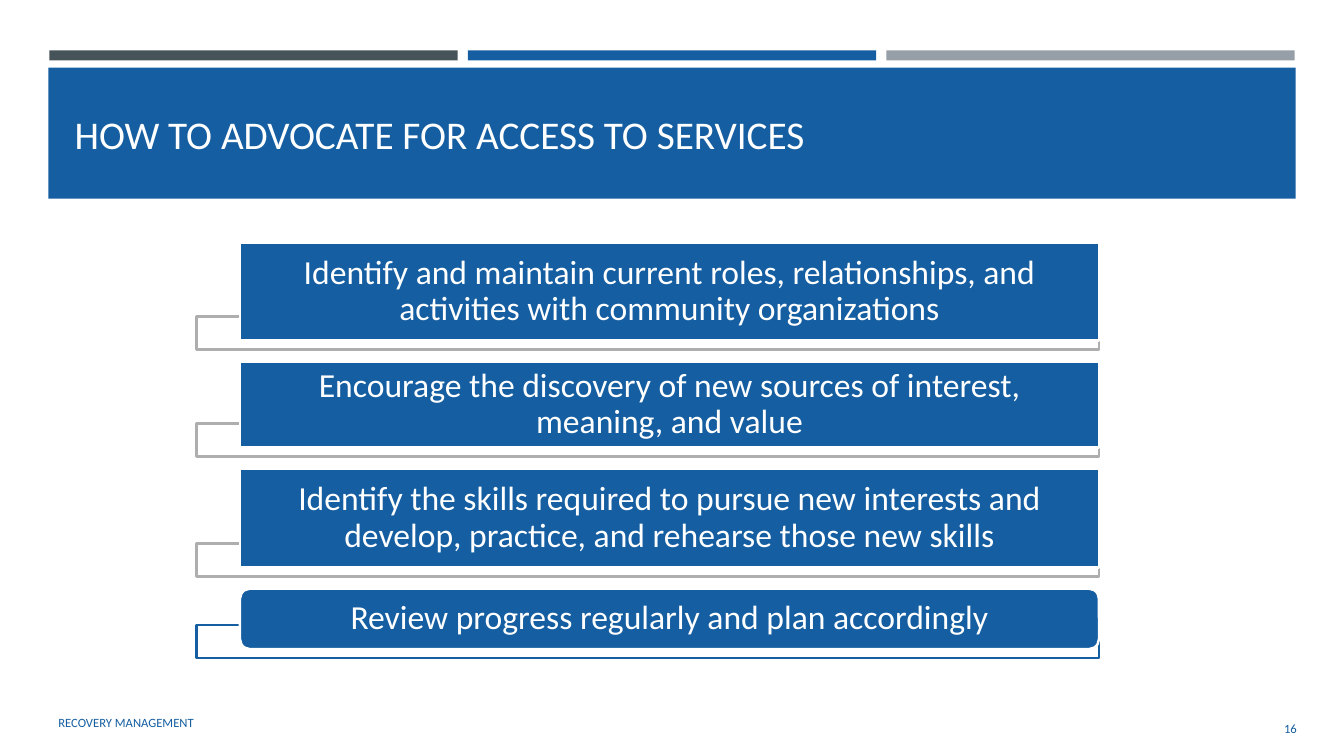
from pptx import Presentation
from pptx.dml.color import RGBColor
from pptx.enum.shapes import MSO_SHAPE
from pptx.enum.text import MSO_ANCHOR, PP_ALIGN
from pptx.util import Inches, Pt

RECT, ROUND = MSO_SHAPE.RECTANGLE, MSO_SHAPE.ROUNDED_RECTANGLE
LEFT, CENTER, RIGHT = PP_ALIGN.LEFT, PP_ALIGN.CENTER, PP_ALIGN.RIGHT
MIDDLE = MSO_ANCHOR.MIDDLE
FONT = "Calibri"
BLUE, WHITE, GRAY = "155EA1", "FFFFFF", "AEAEAE"

TITLE = "HOW TO ADVOCATE FOR ACCESS TO SERVICES"
BARS = ["465359", BLUE, "969FA7"]
STEPS = [
    ("Identify and maintain current roles, relationships, and activities with community organizations", 0.97, RECT, GRAY),
    ("Encourage the discovery of new sources of interest, meaning, and value", 0.85, RECT, GRAY),
    ("Identify the skills required to pursue new interests and develop, practice, and rehearse those new skills", 0.98, RECT, GRAY),
    ("Review progress regularly and plan accordingly", 0.6, ROUND, BLUE),
]
NOTES = [
    ("RECOVERY MANAGEMENT", (0.48, 6.97, 7.46, 0.4), LEFT),
    ("16", (11.81, 7.03, 1.15, 0.4), RIGHT),
]
STEP_TOP, STEP_GAP, OVERLAP = 2.41, 0.21, 0.24


def color(code):
    return RGBColor.from_string(code)


def write(shape, text, size, ink, align, side=0.1, edge=0.05, spacing=1.0):
    frame = shape.text_frame
    frame.text = text
    form = {
        "word_wrap": True, "vertical_anchor": MIDDLE,
        "margin_left": Inches(side), "margin_right": Inches(side),
        "margin_top": Inches(edge), "margin_bottom": Inches(edge),
    }
    for name, value in form.items():
        setattr(frame, name, value)
    line = frame.paragraphs[0]
    line.alignment = align
    line.line_spacing = spacing
    font = line.runs[0].font
    for name, value in {"name": FONT, "size": Pt(size), "bold": False}.items():
        setattr(font, name, value)
    font.color.rgb = color(ink)


def block(slide, box, fill, line=None, kind=RECT):
    shape = slide.shapes.add_shape(kind, *map(Inches, box))
    shape.shadow.inherit = False
    shape.fill.solid()
    shape.fill.fore_color.rgb = color(fill)
    if line:
        shape.line.color.rgb = color(line)
        shape.line.width = Pt(1.75)
    else:
        shape.line.fill.background()
    return shape


def main():
    deck = Presentation()
    deck.slide_width, deck.slide_height = Inches(13.33), Inches(7.5)
    slide = deck.slides.add_slide(deck.slide_layouts[5])

    for i, fill in enumerate(BARS):
        block(slide, (0.49 + 4.15 * i, 0.5, 4.05, 0.1), fill)
    block(slide, (0.48, 0.67, 12.37, 1.3), BLUE)

    title = slide.shapes.title
    title.left, title.top, title.width, title.height = map(Inches, (0.64, 0.77, 12.06, 1.11))
    write(title, TITLE, 28, WHITE, LEFT)
    slide.shapes._spTree.append(title._element)

    top = STEP_TOP
    for text, height, kind, edge in STEPS:
        end = top + height
        block(slide, (1.95, end - OVERLAP, 8.95, 0.33), WHITE, edge)
        step = block(slide, (2.38, top, 8.52, height), BLUE, WHITE, kind)
        write(step, text, 24, WHITE, CENTER, 0.24, 0, 0.9)
        top = end + STEP_GAP

    for text, box, align in NOTES:
        note = slide.shapes.add_textbox(*map(Inches, box))
        write(note, text, 9, BLUE, align)

    deck.save("out.pptx")


if __name__ == "__main__":
    main()
